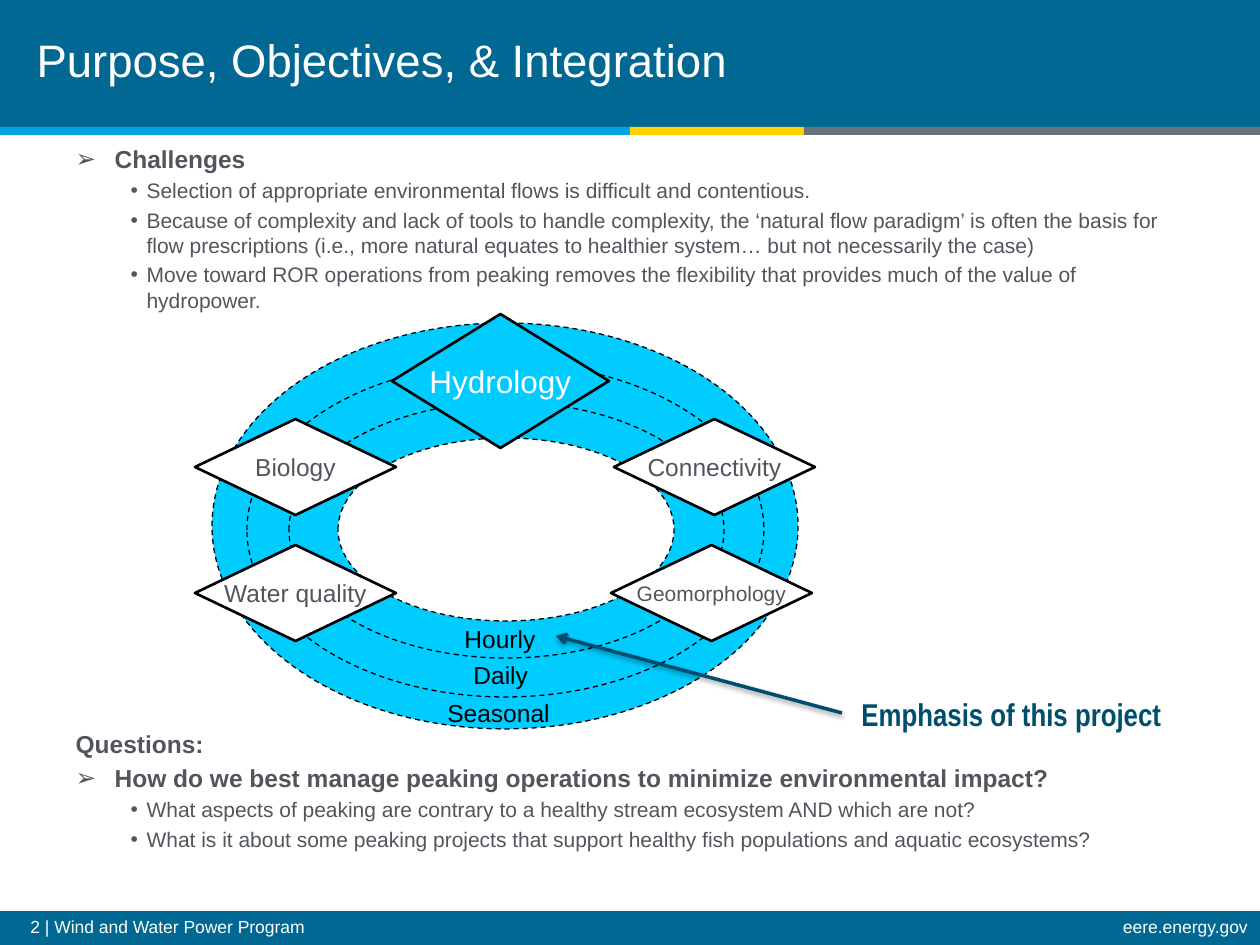
from lxml import etree
from pptx import Presentation
from pptx.dml.color import RGBColor
from pptx.enum.dml import MSO_LINE_DASH_STYLE as Dash
from pptx.enum.shapes import MSO_CONNECTOR_TYPE as Connector, MSO_SHAPE as Shape
from pptx.enum.text import MSO_ANCHOR as Anchor, MSO_AUTO_SIZE as AutoSize, PP_ALIGN as Align
from pptx.oxml.ns import qn
from pptx.util import Emu, Pt

SCALE = 914400 / 126
BLUE, CYAN, NAVY, GRAY = "006892", "00CCFF", "004E6E", "50565C"
WHITE, BLACK = "FFFFFF", "000000"
BODY = [
    ("head", "Challenges", 0),
    ("point", "Selection of appropriate environmental flows is difficult and contentious.", 2.4),
    ("point", "Because of complexity and lack of tools to handle complexity, the ‘natural flow paradigm’ is often "
              "the basis for flow prescriptions (i.e., more natural equates to healthier system… but not "
              "necessarily the case)", 2.4),
    ("point", "Move toward ROR operations from peaking removes the flexibility that provides much of the value "
              "of hydropower.", 2.4),
    ("plain", "Questions:", 238),
    ("head", "How do we best manage peaking operations to minimize environmental impact?", 2.8),
    ("point", "What aspects of peaking are contrary to a healthy stream ecosystem AND which are not?", 2.4),
    ("point", "What is it about some peaking projects that support healthy fish populations and aquatic "
              "ecosystems?", 2.4),
]
STYLES = {"head": (0, 39, -39, "➢", 14), "plain": (0, 39, -39, None, 14), "point": (1, 71, -16, "•", 12)}
RINGS = [(17, 9, 586, 406, CYAN), (143, 124, 336, 183, WHITE), (94, 88, 435, 256, None), (52, 49, 517, 334, None)]
FACTORS = [
    ("Biology", 0, 105, 201, 96, 14, WHITE, GRAY),
    ("Hydrology", 197, 0, 217, 134, 18, CYAN, WHITE),
    ("Water quality", 0, 231, 201, 96, 14, WHITE, GRAY),
    ("Geomorphology", 416, 231, 201, 96, 12, WHITE, GRAY),
    ("Connectivity", 419, 105, 201, 96, 14, WHITE, GRAY),
]
TIMESCALES = [("Hourly", 257, 304, 96), ("Daily", 266, 340, 79), ("Seasonal", 240, 378, 127)]


def px(length):
    """Turn px into EMU."""
    return Emu(round(length * SCALE))


def color(value):
    """Turn a hex string into a colour."""
    return RGBColor.from_string(value)


def place(shape, left, top, width, height):
    """Move and size a shape."""
    shape.left, shape.top, shape.width, shape.height = map(px, (left, top, width, height))


def add_run(paragraph, text, size, fill, bold=False, font="Arial"):
    """Add one formatted run."""
    run = paragraph.add_run()
    run.text = text
    run.font.name, run.font.size, run.font.bold = font, Pt(size), bold
    run.font.color.rgb = color(fill)


def add_form(slide, kind, box, fill=None, line=None, weight=0.75):
    """Add a preset shape without a shadow."""
    shape = slide.shapes.add_shape(kind, *map(px, box))
    shape.shadow.inherit = False
    if fill:
        shape.fill.solid()
        shape.fill.fore_color.rgb = color(fill)
    else:
        shape.fill.background()
    if line:
        shape.line.color.rgb = color(line)
        shape.line.width = Pt(weight)
    else:
        shape.line.fill.background()
    return shape


def add_label(slide, box, text, size, fill, align=Align.LEFT, anchor=Anchor.TOP, **style):
    """Add a one-line text box, with room to spare on the right of left-aligned text."""
    frame = slide.shapes.add_textbox(*map(px, box)).text_frame
    frame.word_wrap = False
    frame.vertical_anchor = anchor
    if align == Align.LEFT:
        frame.margin_right = 0
    paragraph = frame.paragraphs[0]
    paragraph.alignment = align
    add_run(paragraph, text, size, fill, **style)
    return frame


def add_header(slide, left, top, width, height):
    """Draw the title band, its striped rule and the title."""
    add_form(slide, Shape.RECTANGLE, (left, top, width, height), BLUE)
    stripe_left = left
    for stripe_width, fill in ((630, "00A4E4"), (174, "FFD200"), (456, "6A737B")):
        add_form(slide, Shape.RECTANGLE, (stripe_left, top + height, stripe_width, 8), fill)
        stripe_left += stripe_width
    title = slide.shapes.title
    place(title, left + 24, top, 804, height - 2)
    slide.shapes._spTree.append(title._element)
    frame = title.text_frame
    frame.auto_size, frame.vertical_anchor = AutoSize.NONE, Anchor.MIDDLE
    paragraph = frame.paragraphs[0]
    paragraph.alignment, paragraph.line_spacing = Align.LEFT, Pt(28)
    add_run(paragraph, "Purpose, Objectives, & Integration", 26, WHITE)


def add_footer(slide, left, top, width, height):
    """Draw the footer band with its two texts."""
    add_form(slide, Shape.RECTANGLE, (left, top, width, height), BLUE)
    texts = (("2 | Wind and Water Power Program", 18, 1004, Align.LEFT),
             ("eere.energy.gov", 755, 505, Align.RIGHT))
    for text, offset, text_width, align in texts:
        frame = add_label(slide, (left + offset, top + 1, text_width, height - 1), text, 10, WHITE, align)
        frame.word_wrap = True
        frame.paragraphs[0].line_spacing = 0.9


def add_body(slide, left, top, width, height):
    """Fill the body placeholder with the bulleted text."""
    body = slide.placeholders[1]
    place(body, left, top, width, height)
    slide.shapes._spTree.append(body._element)
    frame = body.text_frame
    frame.auto_size = AutoSize.NONE
    for index, (style, text, before) in enumerate(BODY):
        paragraph = frame.add_paragraph() if index else frame.paragraphs[0]
        level, margin, indent, bullet, size = STYLES[style]
        paragraph.level, paragraph.space_before = level, Pt(before)
        properties = paragraph._p.get_or_add_pPr()
        properties.set("marL", str(px(margin)))
        properties.set("indent", str(px(indent)))
        if bullet:
            etree.SubElement(properties, qn("a:buFont"), typeface="Arial")
            etree.SubElement(properties, qn("a:buChar"), char=bullet)
        else:
            etree.SubElement(properties, qn("a:buNone"))
        add_run(paragraph, text, size, GRAY, style != "point")


def add_diagram(slide, left, top):
    """Draw the rings, the factors around them and the time scales."""
    for x, y, width, height, fill in RINGS:
        ring = add_form(slide, Shape.OVAL, (left + x, top + y, width, height), fill, BLACK)
        ring.line.dash_style = Dash.DASH
    for text, x, y, width, height, size, fill, ink in FACTORS:
        diamond = add_form(slide, Shape.DIAMOND, (left + x, top + y, width, height), fill, BLACK, 1.5)
        frame = diamond.text_frame
        frame.word_wrap, frame.vertical_anchor = False, Anchor.MIDDLE
        frame.paragraphs[0].alignment = Align.CENTER
        add_run(frame.paragraphs[0], text, size, ink)
    for text, x, y, width in TIMESCALES:
        add_label(slide, (left + x, top + y, width, 42), text, 14, BLACK)


def add_callout(slide, left, top, width, height):
    """Add the emphasis note and its shadowed arrow."""
    add_label(slide, (left, top, width, height), "Emphasis of this project", 18, NAVY,
              anchor=Anchor.MIDDLE, bold=True, font="Arial Narrow")
    ends = (left - 7, top + 31, left - 293, top - 46)
    arrow = slide.shapes.add_connector(Connector.STRAIGHT, *map(px, ends))
    arrow.line.color.rgb = color(NAVY)
    arrow.line.width = Pt(2)
    etree.SubElement(arrow.line._get_or_add_ln(), qn("a:tailEnd"), type="arrow")
    effects = etree.SubElement(arrow._element.spPr, qn("a:effectLst"))
    shadow = etree.SubElement(effects, qn("a:outerShdw"), blurRad=str(Pt(3.1)), dist=str(Pt(1.6)),
                              dir="5400000", rotWithShape="0")
    tint = etree.SubElement(shadow, qn("a:srgbClr"), val=BLACK)
    etree.SubElement(tint, qn("a:alpha"), val="38000")


def main():
    """Build and save the presentation."""
    presentation = Presentation()
    presentation.slide_width, presentation.slide_height = px(1260), px(945)
    slide = presentation.slides.add_slide(presentation.slide_layouts[1])
    add_header(slide, 0, 0, 1260, 127)
    add_footer(slide, 0, 911, 1260, 34)
    add_body(slide, 63, 138, 1134, 762)
    add_diagram(slide, 195, 314)
    add_callout(slide, 849, 682, 324, 64)
    presentation.save("out.pptx")


if __name__ == "__main__":
    main()
